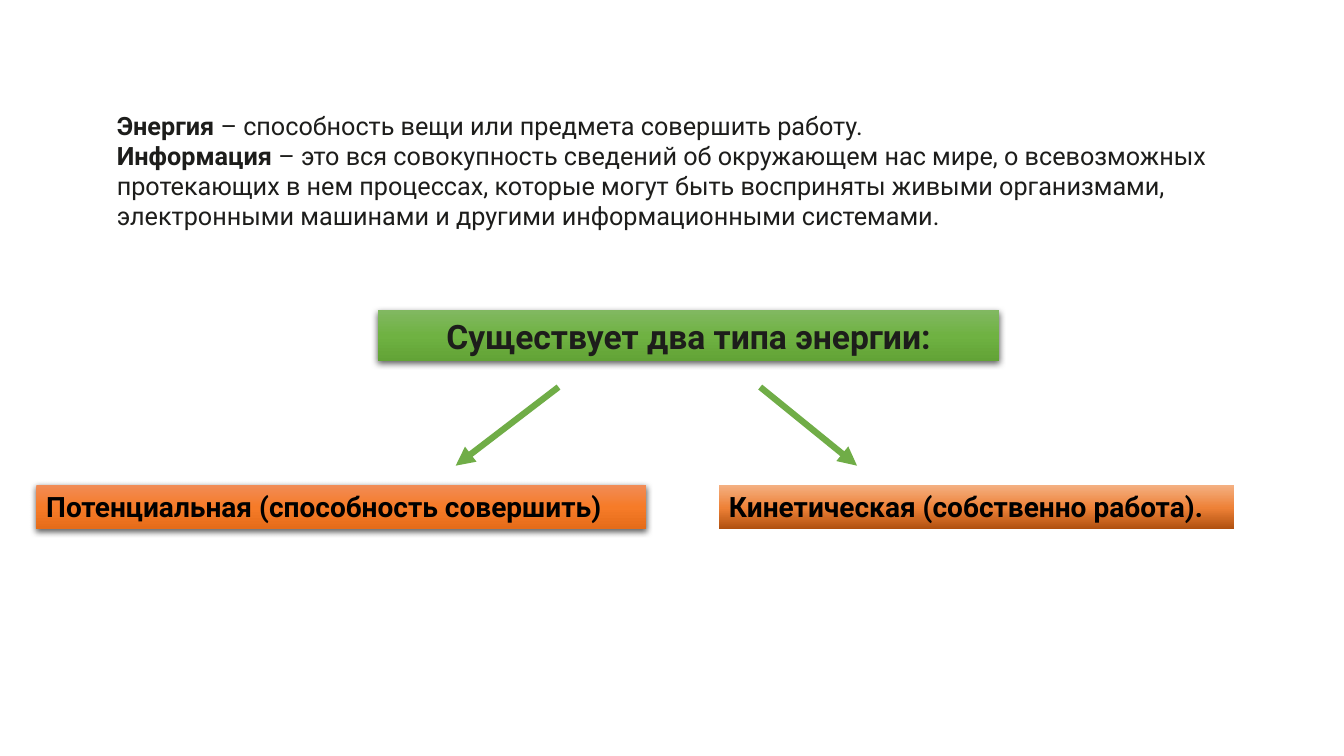
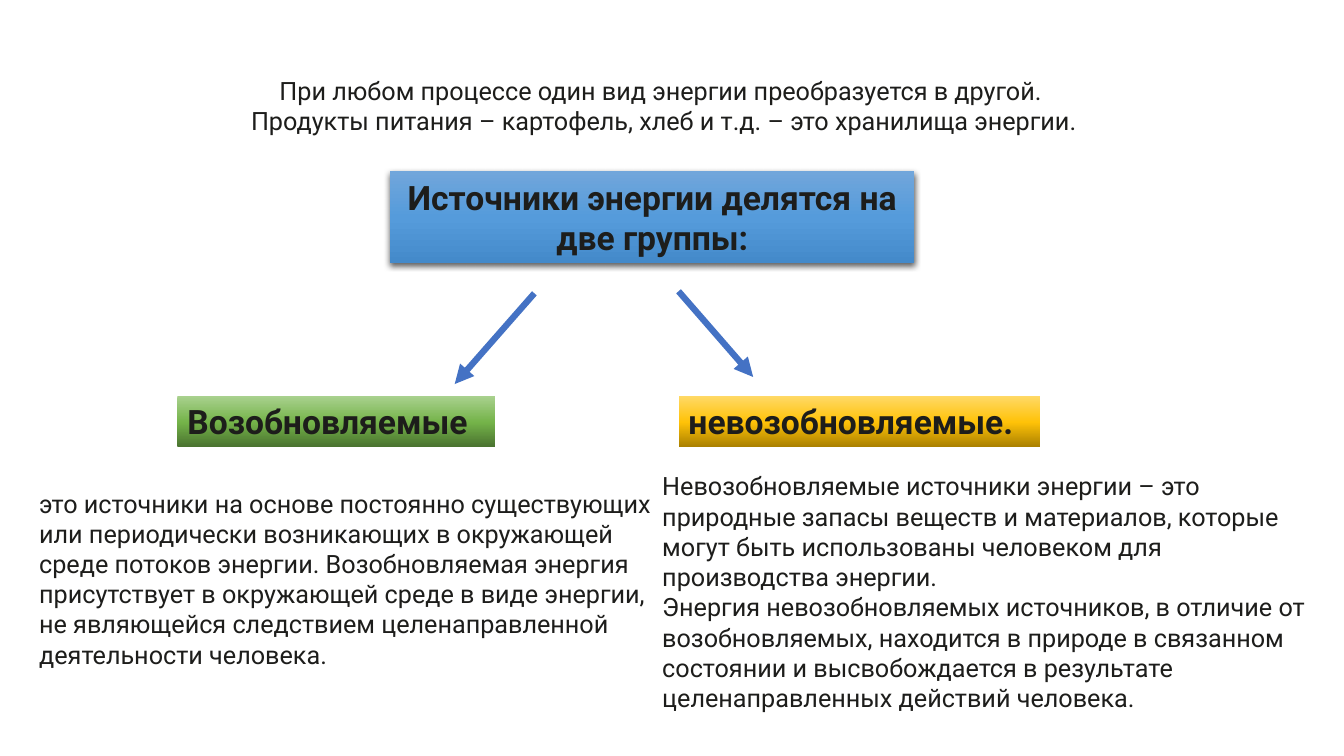
from copy import deepcopy

from lxml import etree
from pptx import Presentation
from pptx.dml.color import RGBColor
from pptx.enum.shapes import MSO_CONNECTOR, MSO_SHAPE
from pptx.enum.text import MSO_ANCHOR, MSO_AUTO_SIZE, PP_ALIGN
from pptx.oxml.ns import qn
from pptx.util import Inches, Pt

LEFT, CENTER = PP_ALIGN.LEFT, PP_ALIGN.CENTER
TOP = MSO_ANCHOR.TOP
NO_AUTOFIT = MSO_AUTO_SIZE.NONE
RECTANGLE = MSO_SHAPE.RECTANGLE
STRAIGHT = MSO_CONNECTOR.STRAIGHT
TITLE_ONLY = 5

# Shared colours; gradients run from top to bottom as (position, colour)
INK = RGBColor(0x1D, 0x1D, 0x1B)
BLACK = RGBColor(0x00, 0x00, 0x00)
GREEN_ARROW = RGBColor(0x70, 0xAD, 0x47)
BLUE_ARROW = RGBColor(0x44, 0x72, 0xC4)
GREEN_TITLE = [(0, RGBColor(0x81, 0xB8, 0x61)), (0.5, RGBColor(0x6F, 0xB2, 0x42)),
               (1, RGBColor(0x62, 0xA3, 0x36))]
BLUE_TITLE = [(0, RGBColor(0x71, 0xA6, 0xDB)), (0.5, RGBColor(0x55, 0x9B, 0xDB)),
              (1, RGBColor(0x44, 0x8A, 0xCA))]
SOFT_ORANGE = [(0, RGBColor(0xF1, 0x8C, 0x57)), (0.5, RGBColor(0xF6, 0x7B, 0x28)),
               (1, RGBColor(0xE5, 0x6C, 0x19))]
DEEP_ORANGE = [(0, RGBColor(0xF4, 0xB1, 0x83)), (0.52, RGBColor(0xEE, 0x81, 0x37)),
               (1, RGBColor(0xB0, 0x50, 0x0F))]
GREEN = [(0, RGBColor(0xA9, 0xD1, 0x8E)), (0.52, RGBColor(0x74, 0xB3, 0x49)),
         (1, RGBColor(0x4B, 0x74, 0x30))]
GOLD = [(0, RGBColor(0xFF, 0xD9, 0x66)), (0.52, RGBColor(0xFF, 0xC2, 0x08)),
        (1, RGBColor(0xAB, 0x81, 0x00))]

# Shared text styles
BODY = {"name": "Roboto", "size": Pt(18), "bold": False}
HEADING = {"name": "Roboto", "size": Pt(24), "bold": True}
LABEL = {"name": "Roboto", "size": Pt(20), "bold": True}

# Grid: ten columns and ten rows to the inch
CELL = Inches(0.1)

# Each text is a list of paragraphs, each paragraph a list of (words, bold) spans
SLIDES = [
    {
        "title": ("Существует два типа энергии:", (37.5, 30.8, 61.6, 5), GREEN_TITLE),
        "texts": [
            ((10.6, 10.4, 113.8, 13.1), LEFT, [
                [("Энергия", True),
                 (" – способность вещи или предмета совершить работу.", False)],
                [("Информация", True),
                 (" – это вся совокупность сведений об окружающем нас мире, "
                  "о всевозможных протекающих в нем процессах, которые могут быть "
                  "восприняты живыми организмами, электронными машинами и другими "
                  "информационными системами.", False)],
            ]),
        ],
        "label style": (LABEL, BLACK),
        "labels": [
            ("Потенциальная (способность совершить)", (3.6, 48.1, 60.5, 4.4),
             SOFT_ORANGE, True),
            ("Кинетическая (собственно работа).", (71.3, 48.1, 51.1, 4.4),
             DEEP_ORANGE, False),
        ],
        "arrow colour": GREEN_ARROW,
        "arrows": [(55.4, 38.4, 45.2, 46.2), (75.4, 38.4, 85, 46.2)],
    },
    {
        "title": ("Источники энергии делятся на две группы:", (38.7, 17, 52, 9.1),
                  BLUE_TITLE),
        "texts": [
            ((8.4, 7, 114.9, 7.1), CENTER, [
                [("При любом процессе один вид энергии преобразуется в другой. ",
                  False)],
                [("Продукты питания – картофель, хлеб и т.д. – это хранилища энергии.",
                  False)],
            ]),
            ((2.9, 47.9, 63.7, 19.2), LEFT, [
                [("это источники на основе постоянно существующих или периодически "
                  "возникающих в окружающей среде потоков энергии. Возобновляемая "
                  "энергия присутствует в окружающей среде в виде энергии, не "
                  "являющейся следствием целенаправленной деятельности человека.",
                  False)],
            ]),
            ((64.7, 46.2, 66.7, 25.2), LEFT, [
                [("Невозобновляемые источники энергии – это природные запасы веществ "
                  "и материалов, которые могут быть использованы человеком для "
                  "производства энергии.", False)],
                [("Энергия невозобновляемых источников, в отличие от возобновляемых, "
                  "находится в природе в связанном состоянии и высвобождается в "
                  "результате целенаправленных действий человека.", False)],
            ]),
        ],
        "label style": (HEADING, INK),
        "labels": [
            ("Возобновляемые", (17.6, 39.3, 31.5, 5), GREEN, False),
            ("невозобновляемые.", (67.3, 39.3, 35.9, 5), GOLD, False),
        ],
        "arrow colour": BLUE_ARROW,
        "arrows": [(53, 29.1, 45.1, 38.1), (67.3, 28.9, 74.7, 37.4)],
    },
]


def write(shape, paragraphs, style, colour, alignment):
    frame = shape.text_frame
    settings = {"word_wrap": True, "auto_size": NO_AUTOFIT, "vertical_anchor": TOP}
    for name, value in settings.items():
        setattr(frame, name, value)
    for index, spans in enumerate(paragraphs):
        para = frame.add_paragraph() if index else frame.paragraphs[0]
        para.alignment = alignment
        for words, bold in spans:
            span = para.add_run()
            span.text = words
            for name, value in {**style, "bold": bold}.items():
                setattr(span.font, name, value)
            span.font.color.rgb = colour


def paint(shape, gradient, shadowed):
    shape.fill.gradient()
    shape.fill.gradient_angle = 270
    properties = shape._element.spPr
    stop_list = properties.find(".//" + qn("a:gsLst"))
    stop_list.insert(1, deepcopy(stop_list[0]))
    for stop, (position, colour) in zip(shape.fill.gradient_stops, gradient):
        stop.position = position
        stop.color.rgb = colour
    shape.line.fill.background()
    shape.shadow.inherit = False
    if shadowed:
        shadow = etree.SubElement(
            properties.find(qn("a:effectLst")), qn("a:outerShdw"),
            blurRad=str(Pt(4.5)), dist=str(Pt(1.5)), dir="5400000",
            algn="ctr", rotWithShape="0")
        tint = etree.SubElement(shadow, qn("a:srgbClr"), val=str(BLACK))
        etree.SubElement(tint, qn("a:alpha"), val="63000")


deck = Presentation()
deck.slide_width, deck.slide_height = Inches(13.33), Inches(7.5)

for content in SLIDES:
    page = deck.slides.add_slide(deck.slide_layouts[TITLE_ONLY])

    # Title band
    words, place, gradient = content["title"]
    title = page.shapes.title
    for name, cells in zip(("left", "top", "width", "height"), place):
        setattr(title, name, int(cells * CELL))
    paint(title, gradient, True)
    write(title, [[(words, True)]], HEADING, INK, CENTER)

    # Running text
    for place, alignment, paragraphs in content["texts"]:
        box = page.shapes.add_textbox(*(int(cells * CELL) for cells in place))
        write(box, paragraphs, BODY, INK, alignment)

    # Labels of the two branches
    style, colour = content["label style"]
    for words, place, gradient, shadowed in content["labels"]:
        label = page.shapes.add_shape(RECTANGLE, *(int(cells * CELL) for cells in place))
        paint(label, gradient, shadowed)
        write(label, [[(words, True)]], style, colour, LEFT)

    # Arrows from the title to the branches
    for ends in content["arrows"]:
        arrow = page.shapes.add_connector(STRAIGHT, *(int(cells * CELL) for cells in ends))
        arrow.line.color.rgb = content["arrow colour"]
        arrow.line.width = Pt(4.5)
        etree.SubElement(arrow.line._get_or_add_ln(), qn("a:tailEnd"), type="triangle")
        etree.SubElement(arrow._element.spPr, qn("a:effectLst"))

deck.save("out.pptx")
